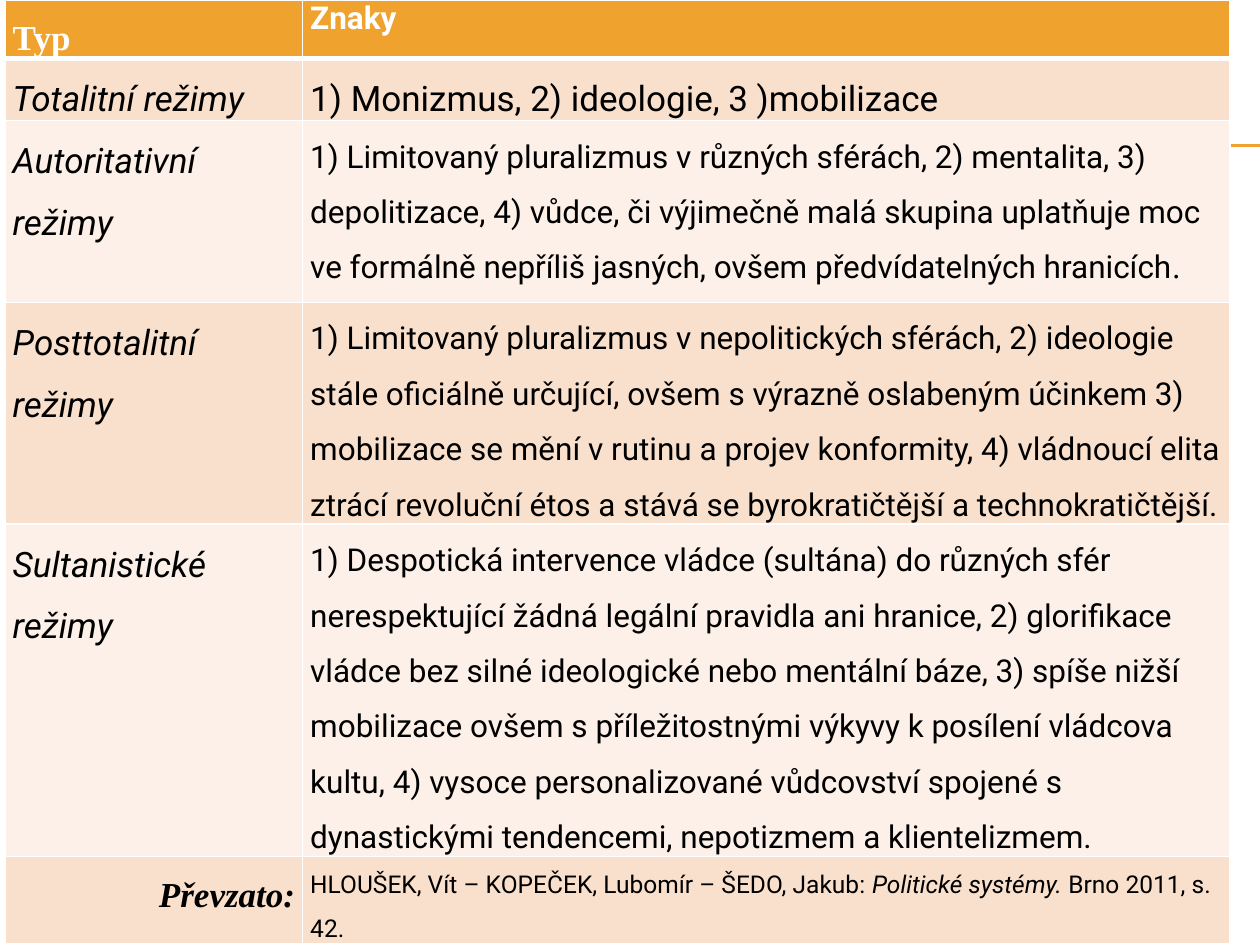
from lxml import etree
from pptx import Presentation
from pptx.dml.color import RGBColor
from pptx.enum.shapes import MSO_CONNECTOR
from pptx.enum.text import PP_ALIGN
from pptx.oxml.ns import qn
from pptx.util import Pt

ORANGE = RGBColor(0xF0, 0xA2, 0x2E)
PEACH = RGBColor(0xF9, 0xE0, 0xCD)
CREAM = RGBColor(0xFC, 0xF0, 0xE8)
WHITE = RGBColor(0xFF, 0xFF, 0xFF)
BLACK = RGBColor(0, 0, 0)
SANS, SERIF = "Roboto", "Times New Roman"

COLUMN_WIDTHS = [170, 530]
ROW_HEIGHTS = [33, 35.5, 104, 126.5, 189.5, 49.5]

# Regime, its features, size of the features text
REGIMES = [
    ("Totalitní režimy", "1) Monizmus, 2) ideologie, 3 )mobilizace", 20),
    ("Autoritativní režimy",
     "1) Limitovaný pluralizmus v různých sférách, 2) mentalita, 3) "
     "depolitizace, 4) vůdce, či výjimečně malá skupina uplatňuje moc ve "
     "formálně nepříliš jasných, ovšem předvídatelných hranicích", 18),
    ("Posttotalitní režimy",
     "1) Limitovaný pluralizmus v nepolitických sférách, 2) ideologie stále "
     "oficiálně určující, ovšem s výrazně oslabeným účinkem 3) mobilizace se "
     "mění v rutinu a projev konformity, 4) vládnoucí elita ztrácí revoluční "
     "étos a stává se byrokratičtější a technokratičtější.", 18),
    ("Sultanistické režimy",
     "1) Despotická intervence vládce (sultána) do různých sfér "
     "nerespektující žádná legální pravidla ani hranice, 2) glorifikace "
     "vládce bez silné ideologické nebo mentální báze, 3) spíše nižší "
     "mobilizace ovšem s příležitostnými výkyvy k posílení vládcova kultu, "
     "4) vysoce personalizované vůdcovství spojené s dynastickými "
     "tendencemi, nepotizmem a klientelizmem.", 18),
]


def add_rule(page, left, top, width):
    line = page.shapes.add_connector(
        MSO_CONNECTOR.STRAIGHT, Pt(left), Pt(top), Pt(left + width), Pt(top))
    line.line.color.rgb = ORANGE
    line.line.width = Pt(0.75)
    etree.SubElement(line._element.spPr, qn("a:effectLst"))


def set_borders(cell, **widths):
    properties = cell._tc.get_or_add_tcPr()
    for side in "LRTB":
        border = etree.SubElement(properties, qn(f"a:ln{side}"),
                                  w=str(Pt(widths.get(side, 1))))
        fill = etree.SubElement(border, qn("a:solidFill"))
        etree.SubElement(fill, qn("a:srgbClr"), val=str(WHITE))


def write(cell, text, size, name=SANS, color=BLACK, bold=False, italic=False,
          spacing=1.5, align=PP_ALIGN.LEFT):
    para = cell.text_frame.paragraphs[0]
    para.alignment = align
    para.line_spacing = spacing
    font = para.font
    font.size, font.name, font.bold, font.italic = Pt(size), name, bold, italic
    font.color.rgb = color
    add_span(para, text)
    return para


def add_span(para, text):
    span = para.add_run()
    span.text = text
    return span


def add_regime_table(page, left, top):
    frame = page.shapes.add_table(
        len(ROW_HEIGHTS), len(COLUMN_WIDTHS), Pt(left), Pt(top),
        Pt(sum(COLUMN_WIDTHS)), Pt(sum(ROW_HEIGHTS)))
    table = frame.table
    for column, width in zip(table.columns, COLUMN_WIDTHS):
        column.width = Pt(width)

    # Row heights, banding and borders
    for index, (row, height) in enumerate(zip(table.rows, ROW_HEIGHTS)):
        row.height = Pt(height)
        for cell in row.cells:
            cell.margin_left = cell.margin_right = Pt(4.3)
            cell.margin_top = cell.margin_bottom = 0
            set_borders(cell, T=3 if index == 1 else 1,
                        B=3 if index == 0 else 1)
            cell.fill.solid()
            cell.fill.fore_color.rgb = (
                ORANGE if index == 0 else PEACH if index % 2 else CREAM)

    # Header
    write(table.cell(0, 0), "Typ", 20, SERIF, WHITE, bold=True)
    write(table.cell(0, 1), "Znaky", 18, color=WHITE, bold=True, spacing=1.0)

    # Regimes
    for index, (regime, features, size) in enumerate(REGIMES, start=1):
        write(table.cell(index, 0), regime, 20, italic=True)
        write(table.cell(index, 1), features, size)
    add_span(table.cell(2, 1).text_frame.paragraphs[0], ".").font.name = SERIF

    # Source
    write(table.cell(5, 0), "Převzato:", 20, SERIF, bold=True, italic=True,
          align=PP_ALIGN.RIGHT)
    para = write(table.cell(5, 1),
                 "HLOUŠEK, Vít – KOPEČEK, Lubomír – ŠEDO, Jakub: ", 14)
    add_span(para, "Politické systémy.").font.italic = True
    add_span(para, " Brno 2011, s. 42.")


def main():
    deck = Presentation()
    deck.slide_width, deck.slide_height = Pt(720), Pt(540)
    page = deck.slides.add_slide(deck.slide_layouts[6])
    for top in (82.8, 83.5):
        add_rule(page, 40.3, top, 679.7)
    add_regime_table(page, 3, 0)
    deck.save("out.pptx")


if __name__ == "__main__":
    main()
